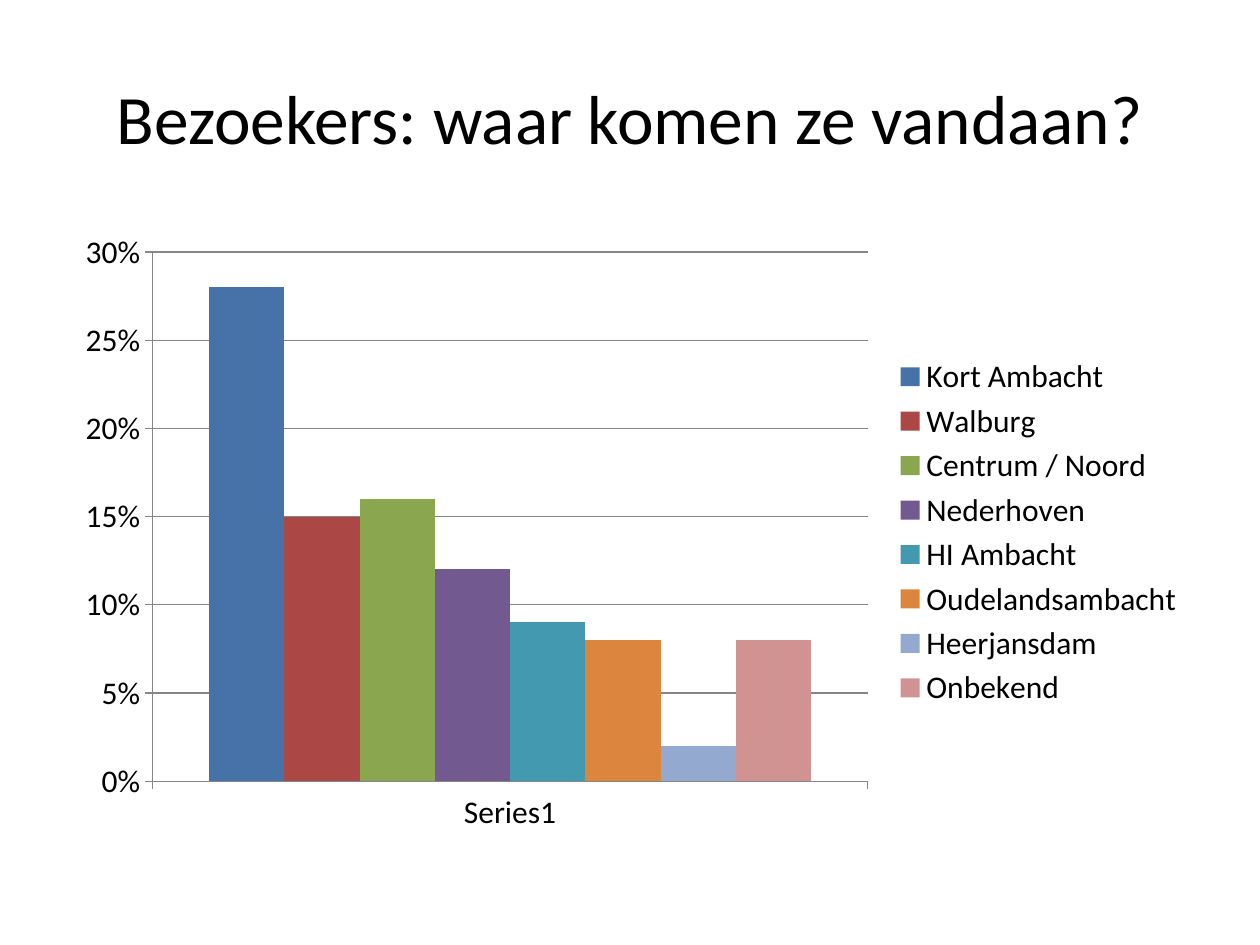
"""Build a slide with a column chart of where the visitors come from."""
import pptx
import pptx.chart.data
import pptx.dml.color
import pptx.enum.chart
import pptx.enum.text
import pptx.util
from pptx.util import Inches

RGBColor = pptx.dml.color.RGBColor
BLACK = RGBColor(0x00, 0x00, 0x00)
GRAY = RGBColor(0x86, 0x86, 0x86)
BLUE = RGBColor(0x46, 0x72, 0xA8)
RED = RGBColor(0xAB, 0x47, 0x44)
GREEN = RGBColor(0x8A, 0xA6, 0x4F)
PURPLE = RGBColor(0x72, 0x59, 0x90)
TEAL = RGBColor(0x42, 0x99, 0xB0)
ORANGE = RGBColor(0xDC, 0x85, 0x3E)
LIGHT_BLUE = RGBColor(0x93, 0xA9, 0xCF)
PINK = RGBColor(0xD1, 0x93, 0x92)

AREAS = [
    ("Kort Ambacht", 0.28, BLUE),
    ("Walburg", 0.15, RED),
    ("Centrum / Noord", 0.16, GREEN),
    ("Nederhoven", 0.12, PURPLE),
    ("HI Ambacht", 0.09, TEAL),
    ("Oudelandsambacht", 0.08, ORANGE),
    ("Heerjansdam", 0.02, LIGHT_BLUE),
    ("Onbekend", 0.08, PINK),
]


def set_text(tf, text, size=18, color=BLACK, font="Calibri",
             align=pptx.enum.text.PP_ALIGN.CENTER):
    p = tf.paragraphs[0]
    p.alignment = align
    r = p.add_run()
    r.text = text
    r.font.size = pptx.util.Pt(size)
    r.font.name = font
    r.font.color.rgb = color


prs = pptx.Presentation()
prs.slide_width, prs.slide_height = Inches(10), Inches(7.5)
s = prs.slides.add_slide(prs.slide_layouts[5])

title = s.shapes.title
title.left, title.top = Inches(0.5), Inches(0.3)
title.width, title.height = Inches(9), Inches(1.25)
tf = title.text_frame
tf.vertical_anchor = pptx.enum.text.MSO_ANCHOR.MIDDLE
set_text(tf, "Bezoekers: waar komen ze vandaan?", size=39.6)

data = pptx.chart.data.CategoryChartData(number_format="0%")
data.categories = ["Series1"]
for name, share, color in AREAS:
    data.add_series(name, [share])

chart = s.shapes.add_chart(
    pptx.enum.chart.XL_CHART_TYPE.COLUMN_CLUSTERED,
    Inches(0.5), Inches(1.75), Inches(9), Inches(4.95), data).chart
chart.has_title = False
chart.font.size = pptx.util.Pt(18)
chart.font.name = "Calibri"
chart.font.color.rgb = BLACK
chart.has_legend = True
chart.legend.position = pptx.enum.chart.XL_LEGEND_POSITION.RIGHT
chart.legend.include_in_layout = False

plot = chart.plots[0]
plot.gap_width = 150
plot.overlap = 0
plot.vary_by_categories = False
for series, (name, share, color) in zip(plot.series, AREAS):
    series.format.fill.solid()
    series.format.fill.fore_color.rgb = color

value_axis = chart.value_axis
value_axis.minimum_scale, value_axis.maximum_scale = 0, 0.3
value_axis.major_unit = 0.05
value_axis.has_major_gridlines = True
value_axis.tick_labels.number_format = "0%"
value_axis.tick_labels.number_format_is_linked = False
for axis in (chart.category_axis, value_axis):
    axis.major_tick_mark = pptx.enum.chart.XL_TICK_MARK.OUTSIDE
for part in (chart.category_axis, value_axis, value_axis.major_gridlines):
    part.format.line.color.rgb = GRAY
    part.format.line.width = pptx.util.Pt(0.75)

prs.save("out.pptx")
